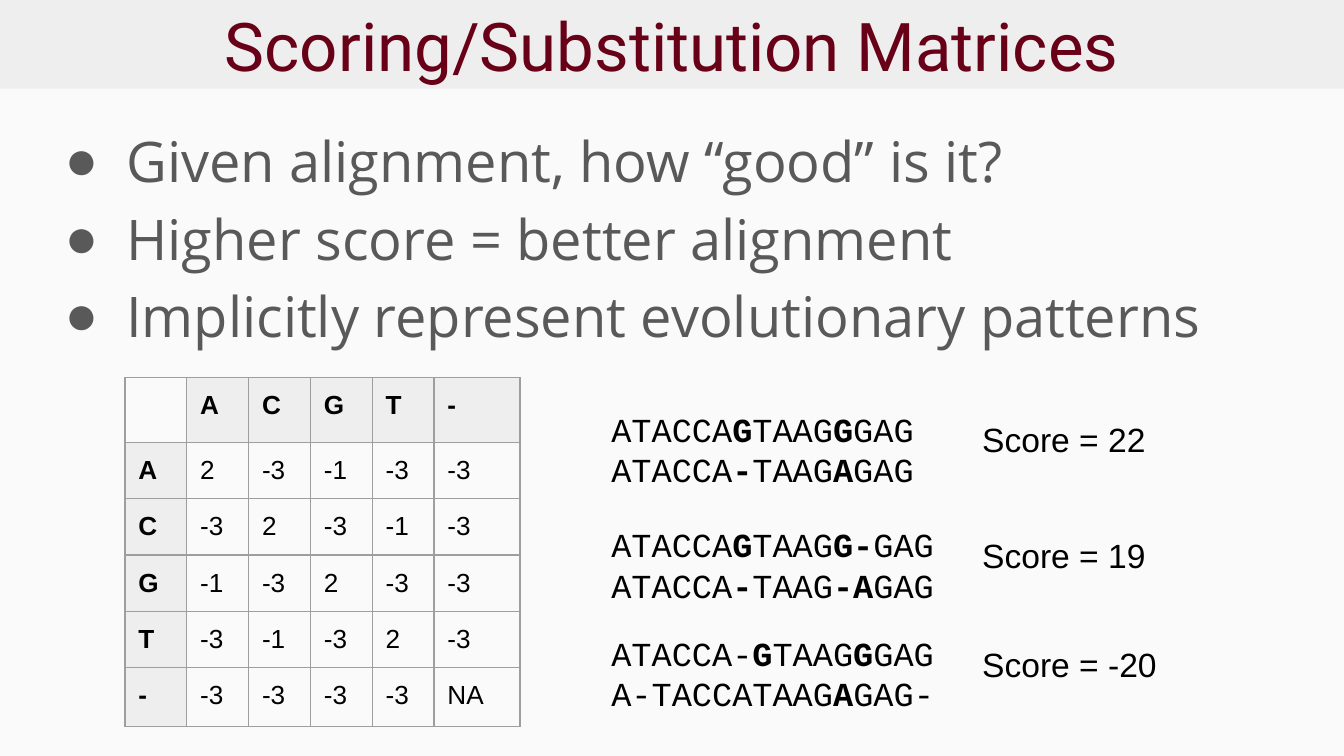
from dataclasses import dataclass

from pptx import Presentation
from pptx import util as u
from pptx.dml.color import RGBColor
from pptx.enum import text as t
from pptx.oxml import parse_xml
from pptx.oxml.ns import nsdecls


@dataclass(frozen=True)
class Theme:
    page: str = "FAFAFA"
    band: str = "EEEEEE"
    title: str = "680018"
    body: str = "595959"
    ink: str = "000000"
    rule: str = "9E9E9E"
    head: int = 36
    list: int = 30
    note: int = 18
    cell: int = 14


@dataclass(frozen=True)
class Font:
    name: str
    size: int
    color: str


@dataclass(frozen=True)
class Pair:
    top: float
    first: str
    second: str
    score: int


THEME = Theme()
TITLE = Font("Roboto", THEME.head, THEME.title)
BODY = Font("Open Sans", THEME.list, THEME.body)
CODE = Font("Courier New", THEME.note, THEME.ink)
NOTE = Font("Arial", THEME.note, THEME.ink)
CELL = Font("Arial", THEME.cell, THEME.ink)

POINTS = [
    "Given alignment, how “good” is it?",
    "Higher score = better alignment",
    "Implicitly represent evolutionary patterns",
]
BASES = "ACGT-"
SCORES = [
    ["2", "-3", "-1", "-3", "-3"],
    ["-3", "2", "-3", "-1", "-3"],
    ["-1", "-3", "2", "-3", "-3"],
    ["-3", "-1", "-3", "2", "-3"],
    ["-3", "-3", "-3", "-3", "NA"],
]
COLS = [0.46] * 5 + [0.64]
ROWS = [0.48] + [0.42] * 4 + [0.44]
PAIRS = [
    Pair(2.94, "ATACCA*G*TAAG*G*GAG", "ATACCA*-*TAAG*A*GAG", 22),
    Pair(3.8, "ATACCA*G*TAAG*G-*GAG", "ATACCA*-*TAAG*-A*GAG", 19),
    Pair(4.61, "ATACCA-*G*TAAG*G*GAG", "A-TACCATAAG*A*GAG-", -20),
]


def add_run(para, words: str, font: Font, bold: bool = False) -> None:
    run = para.add_run()
    run.text = words
    run.font.name = font.name
    run.font.size = u.Pt(font.size)
    run.font.bold = bold
    run.font.color.rgb = RGBColor.from_string(font.color)


def add_marked(para, line: str, font: Font) -> None:
    for i, part in enumerate(line.split("*")):
        add_run(para, part, font, bold=i % 2 == 1)


def pad(frame) -> None:
    frame.margin_left = frame.margin_right = u.Inches(0.1)
    frame.margin_top = frame.margin_bottom = u.Inches(0.1)


def place(shape, left: float, top: float, width: float, height: float) -> None:
    shape.left, shape.top = u.Inches(left), u.Inches(top)
    shape.width, shape.height = u.Inches(width), u.Inches(height)


def set_fill(owner, color: str) -> None:
    owner.fill.solid()
    owner.fill.fore_color.rgb = RGBColor.from_string(color)


def draw_title(shape) -> None:
    place(shape, 0, 0, 10, 0.66)
    set_fill(shape, THEME.band)
    frame = shape.text_frame
    pad(frame)
    frame.auto_size = t.MSO_AUTO_SIZE.NONE
    frame.vertical_anchor = t.MSO_ANCHOR.MIDDLE
    para = frame.paragraphs[0]
    para.alignment = t.PP_ALIGN.CENTER
    add_run(para, "Scoring/Substitution Matrices", TITLE)


def draw_list(shape) -> None:
    place(shape, 0.34, 0.77, 9.32, 1.93)
    frame = shape.text_frame
    pad(frame)
    frame.auto_size = t.MSO_AUTO_SIZE.TEXT_TO_FIT_SHAPE
    frame.vertical_anchor = t.MSO_ANCHOR.TOP
    for i, point in enumerate(POINTS):
        para = frame.add_paragraph() if i else frame.paragraphs[0]
        para.line_spacing = 1.15
        para.space_before = u.Pt(0 if i else 10)
        props = para._p.get_or_add_pPr()
        props.set("marL", str(u.Inches(0.5)))
        props.set("indent", str(u.Inches(-0.46)))
        props.append(parse_xml(
            f'<a:buClr {nsdecls("a")}><a:srgbClr val="{THEME.body}"/></a:buClr>'))
        props.append(parse_xml(f'<a:buChar {nsdecls("a")} char="●"/>'))
        add_run(para, point, BODY)


def draw_cell(cell, words: str, head: bool) -> None:
    pad(cell)
    props = cell._tc.get_or_add_tcPr()
    for side in "LRTB":
        props.append(parse_xml(
            f'<a:ln{side} {nsdecls("a")} w="{u.Pt(0.75)}"><a:solidFill>'
            f'<a:srgbClr val="{THEME.rule}"/></a:solidFill></a:ln{side}>'))
    if head and words:
        set_fill(cell, THEME.band)
    else:
        cell.fill.background()
    para = cell.text_frame.paragraphs[0]
    if words:
        add_run(para, words, CELL, head)
    else:
        para._p.append(parse_xml(
            f'<a:endParaRPr {nsdecls("a")} sz="{CELL.size * 100}">'
            f'<a:latin typeface="{CELL.name}"/></a:endParaRPr>'))


def draw_matrix(slide) -> None:
    grid = slide.shapes.add_table(
        len(ROWS), len(COLS), u.Inches(0.93), u.Inches(2.81),
        u.Inches(sum(COLS)), u.Inches(sum(ROWS))).table
    grid.first_row = grid.horz_banding = False
    for col, width in zip(grid.columns, COLS):
        col.width = u.Inches(width)
    for row, height in zip(grid.rows, ROWS):
        row.height = u.Inches(height)
    lines = [["", *BASES]] + [[b, *vals] for b, vals in zip(BASES, SCORES)]
    for r, line in enumerate(lines):
        for c, words in enumerate(line):
            draw_cell(grid.cell(r, c), words, r == 0 or c == 0)


def draw_text(slide, left: float, top: float, width: float, height: float,
              lines: list[str], font: Font) -> None:
    box = slide.shapes.add_textbox(0, 0, 0, 0)
    place(box, left, top, width, height)
    frame = box.text_frame
    frame.word_wrap = True
    pad(frame)
    for i, line in enumerate(lines):
        para = frame.add_paragraph() if i else frame.paragraphs[0]
        add_marked(para, line, font)


def draw_pair(slide, pair: Pair) -> None:
    draw_text(slide, 4.45, pair.top, 2.75, 0.66, [pair.first, pair.second], CODE)
    draw_text(slide, 7.21, pair.top + 0.08, 1.63, 0.5,
              [f"Score = {pair.score}"], NOTE)


def main() -> None:
    deck = Presentation()
    deck.slide_width = u.Inches(10)
    deck.slide_height = deck.slide_width * 9 // 16
    slide = deck.slides.add_slide(deck.slide_layouts[1])
    set_fill(slide.background, THEME.page)
    draw_title(slide.shapes.title)
    draw_list(slide.placeholders[1])
    draw_matrix(slide)
    for pair in PAIRS:
        draw_pair(slide, pair)
    deck.save("out.pptx")


if __name__ == "__main__":
    main()
